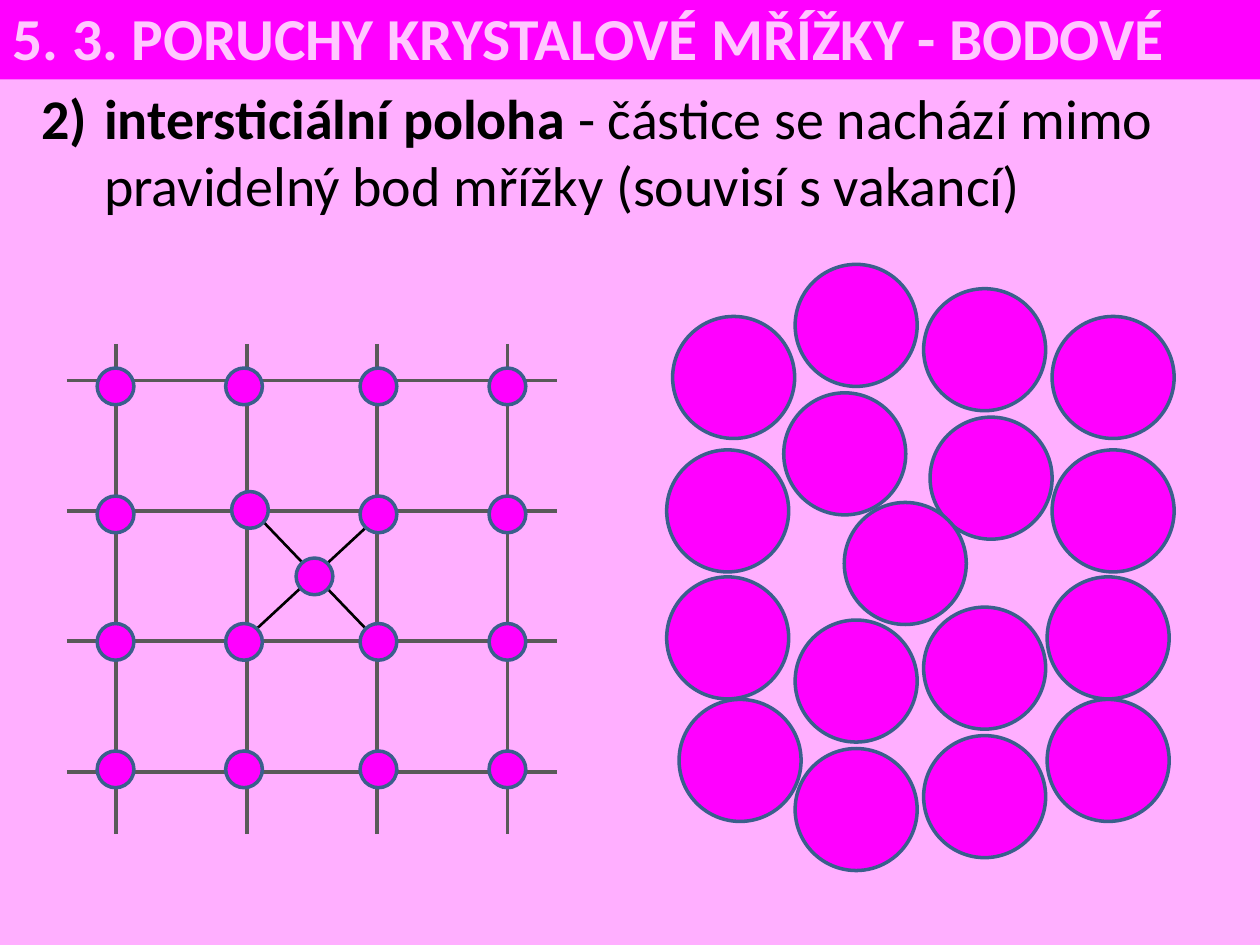
from lxml import etree
from pptx import Presentation
from pptx.dml.color import RGBColor
from pptx.enum.shapes import MSO_CONNECTOR, MSO_SHAPE
from pptx.enum.text import MSO_ANCHOR, MSO_AUTO_SIZE, PP_ALIGN
from pptx.oxml.ns import qn
from pptx.util import Cm, Pt

OVAL = MSO_SHAPE.OVAL
STRAIGHT = MSO_CONNECTOR.STRAIGHT
MIDDLE = MSO_ANCHOR.MIDDLE
FIXED = MSO_AUTO_SIZE.NONE
LEFT = PP_ALIGN.LEFT
TITLE_ONLY = 5

COLOURS = {
    "background": "FFAFFF",
    "atom": "FF00FF",
    "outline": "3A5F8C",
    "lattice": "595959",
    "title": "FFC8FF",
    "text": "000000",
}

SMALL, LARGE = 0.74, 2.46
LATTICE_LEFT, LATTICE_TOP, LATTICE_LENGTH = 1.35, 6.93, 9.88
FIRST_COLUMN, FIRST_ROW, STEP = 2.34, 7.67, 2.63
ATOM_LEFTS = (1.96, 4.55, 7.26, 9.86)
ATOM_TOPS = (7.42, 10, 12.57, 15.14)
DISPLACED = {(4.55, 10): (4.67, 9.91)}
INTERSTITIAL = (5.97, 11.25)
BONDS = (
    (5.31, 10.52, 7.37, 12.67),
    (7.37, 10.64, 5.18, 12.67),
)
PACKED_ATOMS = (
    (13.56, 6.38), (16.03, 5.33), (18.62, 5.82), (21.21, 6.38),
    (13.44, 9.07), (15.8, 7.92), (18.75, 8.41), (21.21, 9.07),
    (13.44, 11.63), (16.03, 12.5), (18.62, 12.24), (21.11, 11.63),
    (13.69, 14.1), (16.03, 15.09), (18.62, 14.83), (21.11, 14.1),
    (17.02, 10.13),
)


class LatticePage:
    font = "Calibri"

    def __init__(self, deck):
        self.page = deck.slides.add_slide(deck.slide_layouts[TITLE_ONLY])
        self.paint(self.page.background.fill, "background")

    def paint(self, fill, colour):
        fill.solid()
        fill.fore_color.rgb = RGBColor.from_string(COLOURS[colour])

    def style(self, span, size, colour, bold):
        span.font.name = self.font
        span.font.size = Pt(size)
        span.font.bold = bold
        span.font.color.rgb = RGBColor.from_string(COLOURS[colour])

    def title(self, text, left, top, width, height):
        box = self.page.shapes.title
        box.left, box.top, box.width, box.height = map(Cm, (left, top, width, height))
        self.paint(box.fill, "atom")
        frame = box.text_frame
        frame.text = text
        frame.auto_size = FIXED
        frame.vertical_anchor = MIDDLE
        para = frame.paragraphs[0]
        para.alignment = LEFT
        self.style(para.runs[0], 34, "title", True)

    def numbered_text(self, number, term, lines, left, top, width, height):
        box = self.page.shapes.add_textbox(*map(Cm, (left, top, width, height)))
        box.text_frame.word_wrap = True
        para = box.text_frame.paragraphs[0]
        para.text = term
        self.style(para.runs[0], 32, "text", True)
        for index, line in enumerate(lines):
            if index:
                para.add_line_break()
            span = para.add_run()
            span.text = line
            self.style(span, 32, "text", False)
        properties = para._p.get_or_add_pPr()
        properties.set("marL", str(Cm(1.27)))
        properties.set("indent", str(-Cm(1.27)))
        etree.SubElement(properties, qn("a:buFont"), typeface=self.font)
        etree.SubElement(properties, qn("a:buAutoNum"), type="arabicParenR", startAt=str(number))

    def line(self, ends, colour, weight):
        connector = self.page.shapes.add_connector(STRAIGHT, *map(Cm, ends))
        self.paint(connector.line.fill, colour)
        connector.line.width = Pt(weight)
        etree.SubElement(connector._element.spPr, qn("a:effectLst"))

    def atom(self, left, top, diameter):
        shape = self.page.shapes.add_shape(OVAL, *map(Cm, (left, top, diameter, diameter)))
        shape.shadow.inherit = False
        self.paint(shape.fill, "atom")
        self.paint(shape.line.fill, "outline")
        shape.line.width = Pt(2)


def main():
    deck = Presentation()
    deck.slide_width, deck.slide_height = Cm(25.4), Cm(19.05)
    page = LatticePage(deck)

    page.title("5. 3. PORUCHY KRYSTALOVÉ MŘÍŽKY - BODOVÉ", 0, -0.1, 25.4, 1.7)
    page.numbered_text(
        2,
        "intersticiální poloha",
        (" - částice se nachází mimo ", "pravidelný bod mřížky (souvisí s vakancí)"),
        0.58, 1.55, 24.82, 5.74,
    )

    for bond in BONDS:
        page.line(bond, "text", 1.5)
    for index in range(4):
        x = FIRST_COLUMN + index * STEP
        y = FIRST_ROW + index * STEP
        page.line((LATTICE_LEFT, y, LATTICE_LEFT + LATTICE_LENGTH, y), "lattice", 2.25)
        page.line((x, LATTICE_TOP, x, LATTICE_TOP + LATTICE_LENGTH), "lattice", 2.25)

    for top in ATOM_TOPS:
        for left in ATOM_LEFTS:
            page.atom(*DISPLACED.get((left, top), (left, top)), SMALL)
    page.atom(*INTERSTITIAL, SMALL)
    for left, top in PACKED_ATOMS:
        page.atom(left, top, LARGE)

    deck.save("out.pptx")


if __name__ == "__main__":
    main()
